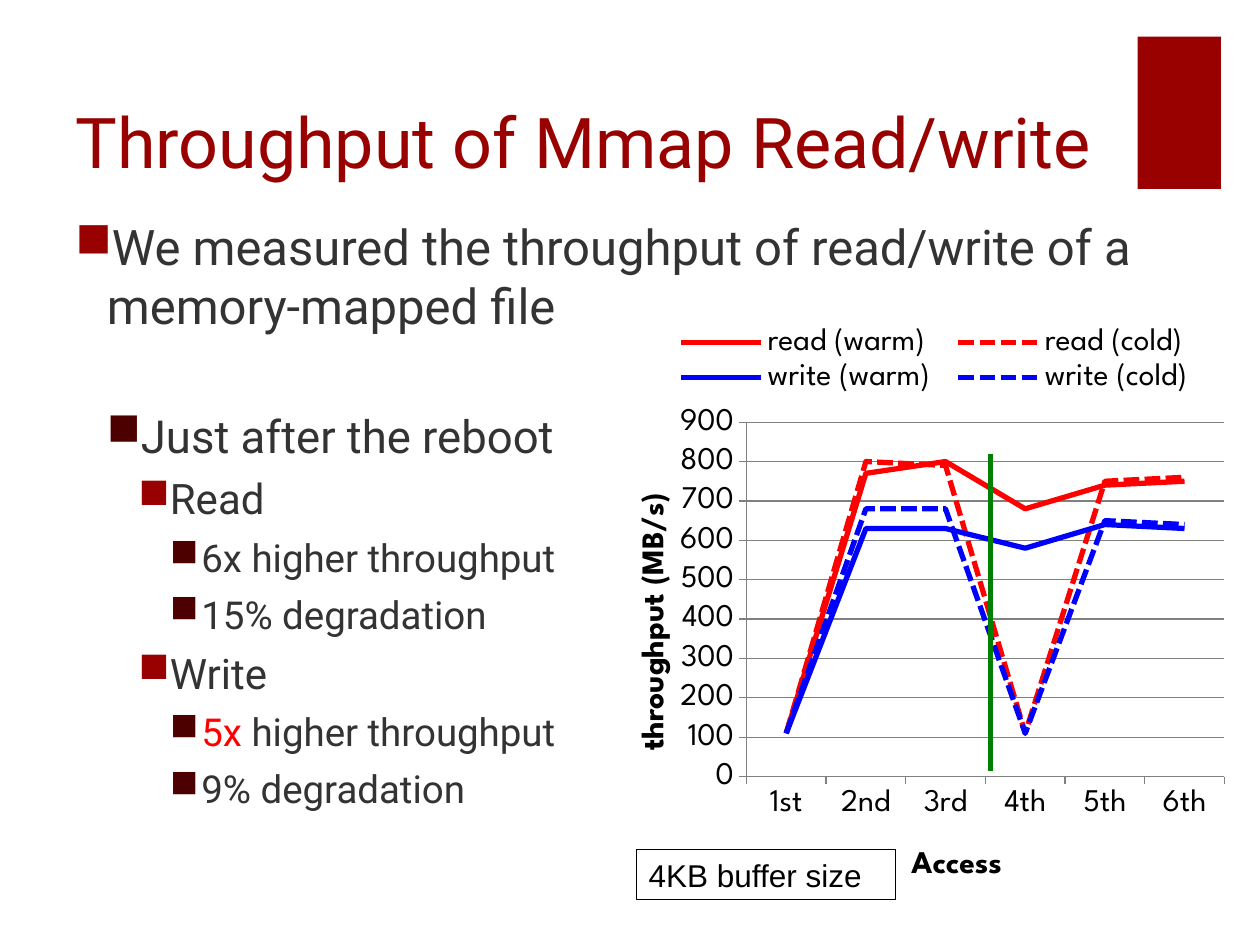
from pptx import Presentation
from pptx.chart.data import CategoryChartData
from pptx.dml.color import RGBColor
from pptx.enum.chart import XL_CHART_TYPE as ChartType, XL_LEGEND_POSITION as LegendPosition
from pptx.enum.chart import XL_MARKER_STYLE as MarkerStyle, XL_TICK_MARK as TickMark
from pptx.enum.dml import MSO_LINE_DASH_STYLE as DashStyle
from pptx.enum.shapes import MSO_CONNECTOR as Connector, MSO_SHAPE as Shape
from pptx.enum.text import MSO_ANCHOR as Anchor, PP_ALIGN as Align
from pptx.oxml import parse_xml
from pptx.oxml.ns import nsdecls, qn
from pptx.util import Inches, Pt

DARK_RED = RGBColor(0x99, 0x00, 0x00)
MAROON = RGBColor(0x4D, 0x00, 0x00)
TEXT_GRAY = RGBColor(0x33, 0x33, 0x33)
GRID_GRAY = RGBColor(0x80, 0x80, 0x80)
RED = RGBColor(0xFF, 0x00, 0x00)
BLUE = RGBColor(0x00, 0x00, 0xFF)
GREEN = RGBColor(0x00, 0x80, 0x00)
BLACK = RGBColor(0x00, 0x00, 0x00)

LEVEL_SIZES = [28, 26, 24, 22]
BULLET_COLORS = [DARK_RED, MAROON]

OUTLINE = [
    (0, 18, [("We measured the throughput of read/write of a memory-mapped file", TEXT_GRAY)]),
    (1, 42, [("Just after the reboot", TEXT_GRAY)]),
    (2, 6, [("Read", TEXT_GRAY)]),
    (3, 6, [("6x higher throughput", TEXT_GRAY)]),
    (3, 6, [("15% degradation", TEXT_GRAY)]),
    (2, 6, [("Write", TEXT_GRAY)]),
    (3, 6, [("5x", RED), (" higher throughput", TEXT_GRAY)]),
    (3, 6, [("9% degradation", TEXT_GRAY)]),
]

ACCESSES = ["1st", "2nd", "3rd", "4th", "5th", "6th"]
SERIES = [
    ("read (warm)", [110, 770, 800, 680, 740, 750], RED, DashStyle.SOLID),
    ("read (cold)", [110, 800, 790, 110, 750, 760], RED, DashStyle.SQUARE_DOT),
    ("write (warm)", [110, 630, 630, 580, 640, 630], BLUE, DashStyle.SOLID),
    ("write (cold)", [110, 680, 680, 110, 650, 640], BLUE, DashStyle.SQUARE_DOT),
]


def style_font(font, name, size, color, bold=False):
    font.name = name
    font.size = Pt(size)
    font.color.rgb = color
    font.bold = bold


def add_accent(slide, left, top, width, height):
    accent = slide.shapes.add_shape(Shape.RECTANGLE, left, top, width, height)
    accent.shadow.inherit = False
    accent.fill.solid()
    accent.fill.fore_color.rgb = DARK_RED
    accent.line.fill.background()


def add_title(slide, left, top, width, height):
    text_frame = slide.shapes.add_textbox(left, top, width, height).text_frame
    text_frame.word_wrap = True
    text_frame.vertical_anchor = Anchor.BOTTOM
    text_frame.text = "Throughput of Mmap Read/write"
    style_font(text_frame.paragraphs[0].runs[0].font, "Roboto", 40, DARK_RED)


def add_bullet(paragraph, level):
    properties = paragraph._p.get_or_add_pPr()
    properties.set("marL", str(Inches(0.25 * (level + 1))))
    properties.set("indent", str(Inches(-0.25)))
    color = BULLET_COLORS[level % 2]
    properties.append(parse_xml(
        f'<a:buClr {nsdecls("a")}><a:srgbClr val="{color}"/></a:buClr>'))
    properties.append(parse_xml(f'<a:buChar {nsdecls("a")} char="■"/>'))


def add_outline(slide, left, top, width, height):
    text_frame = slide.shapes.add_textbox(left, top, width, height).text_frame
    text_frame.word_wrap = True
    for index, (level, space_before, pieces) in enumerate(OUTLINE):
        paragraph = text_frame.add_paragraph() if index else text_frame.paragraphs[0]
        paragraph.level = level
        paragraph.space_before = Pt(space_before)
        add_bullet(paragraph, level)
        for text, color in pieces:
            run = paragraph.add_run()
            run.text = text
            style_font(run.font, "Roboto", LEVEL_SIZES[level], color)


def set_layout(element, index, target="", **fractions):
    for old_layout in element.findall(qn("c:layout")):
        element.remove(old_layout)
    target_xml = f'<c:layoutTarget val="{target}"/>' if target else ""
    modes = '<c:xMode val="edge"/><c:yMode val="edge"/>'
    values = "".join(f'<c:{key} val="{value}"/>' for key, value in fractions.items())
    element.insert(index, parse_xml(
        f'<c:layout {nsdecls("c")}><c:manualLayout>{target_xml}{modes}{values}'
        '</c:manualLayout></c:layout>'))


def style_axis(axis, title, x, y):
    axis.major_tick_mark = TickMark.OUTSIDE
    axis.minor_tick_mark = TickMark.NONE
    axis.format.line.color.rgb = GRID_GRAY
    style_font(axis.tick_labels.font, "League Spartan", 18, BLACK)
    text_frame = axis.axis_title.text_frame
    text_frame.text = title
    style_font(text_frame.paragraphs[0].runs[0].font, "League Spartan", 18, BLACK, True)
    set_layout(axis.axis_title.element, 1, x=x, y=y)


def add_throughput_chart(slide, left, top, width, height):
    data = CategoryChartData()
    data.categories = ACCESSES
    for name, values, _, _ in SERIES:
        data.add_series(name, values)
    chart = slide.shapes.add_chart(ChartType.LINE, left, top, width, height, data).chart
    chart.has_title = False
    style_font(chart.font, "League Spartan", 18, BLACK)
    chart.plots[0].vary_by_categories = False
    for series, (_, _, color, dash) in zip(chart.plots[0].series, SERIES):
        series.smooth = False
        series.marker.style = MarkerStyle.NONE
        series.format.line.color.rgb = color
        series.format.line.width = Pt(3)
        series.format.line.dash_style = dash

    style_axis(chart.category_axis, "Access", 0.48, 0.9)
    value_axis = chart.value_axis
    style_axis(value_axis, "throughput (MB/s)", 0.05, 0.3)
    body = value_axis.axis_title.element.find(".//" + qn("a:bodyPr"))
    body.set("rot", "-5400000")
    body.set("vert", "horz")
    value_axis.minimum_scale = 0
    value_axis.maximum_scale = 900
    value_axis.major_unit = 100
    value_axis.has_major_gridlines = True
    value_axis.major_gridlines.format.line.color.rgb = GRID_GRAY

    chart.has_legend = True
    chart.legend.position = LegendPosition.TOP
    chart.legend.include_in_layout = False
    style_font(chart.legend.font, "League Spartan", 18, BLACK)
    set_layout(chart.element.find(".//" + qn("c:legend")), 1, x=0.1, y=0.02, w=0.85, h=0.13)
    set_layout(chart.element.find(".//" + qn("c:plotArea")), 0, "inner",
               x=0.23, y=0.19, w=0.75, h=0.6)


def add_buffer_note(slide, left, top, width, height):
    note = slide.shapes.add_shape(Shape.RECTANGLE, left, top, width, height)
    note.shadow.inherit = False
    note.fill.background()
    note.line.color.rgb = BLACK
    note.line.width = Pt(0.75)
    text_frame = note.text_frame
    text_frame.word_wrap = False
    text_frame.text = "4KB buffer size"
    paragraph = text_frame.paragraphs[0]
    paragraph.alignment = Align.LEFT
    style_font(paragraph.runs[0].font, "Arial", 18, BLACK)


def add_reboot_line(slide, left, top, height):
    line = slide.shapes.add_connector(Connector.STRAIGHT, left, top, left, top + height)
    line.line.color.rgb = GREEN
    line.line.width = Pt(3)
    line._element.spPr.append(parse_xml(f'<a:effectLst {nsdecls("a")}/>'))


def main():
    presentation = Presentation()
    presentation.slide_width = Inches(10)
    presentation.slide_height = Inches(7.5)
    slide = presentation.slides.add_slide(presentation.slide_layouts[6])
    add_accent(slide, Inches(9.03), Inches(0.29), Inches(0.66), Inches(1.21))
    add_title(slide, Inches(0.5), Inches(0.25), Inches(8.42), Inches(1.25))
    add_outline(slide, Inches(0.5), Inches(1.67), Inches(8.92), Inches(5.28))
    add_throughput_chart(slide, Inches(4.76), Inches(2.46), Inches(5.06), Inches(4.69))
    add_buffer_note(slide, Inches(5.05), Inches(6.74), Inches(2.06), Inches(0.4))
    add_reboot_line(slide, Inches(7.86), Inches(3.6), Inches(2.52))
    presentation.save("out.pptx")


if __name__ == "__main__":
    main()
